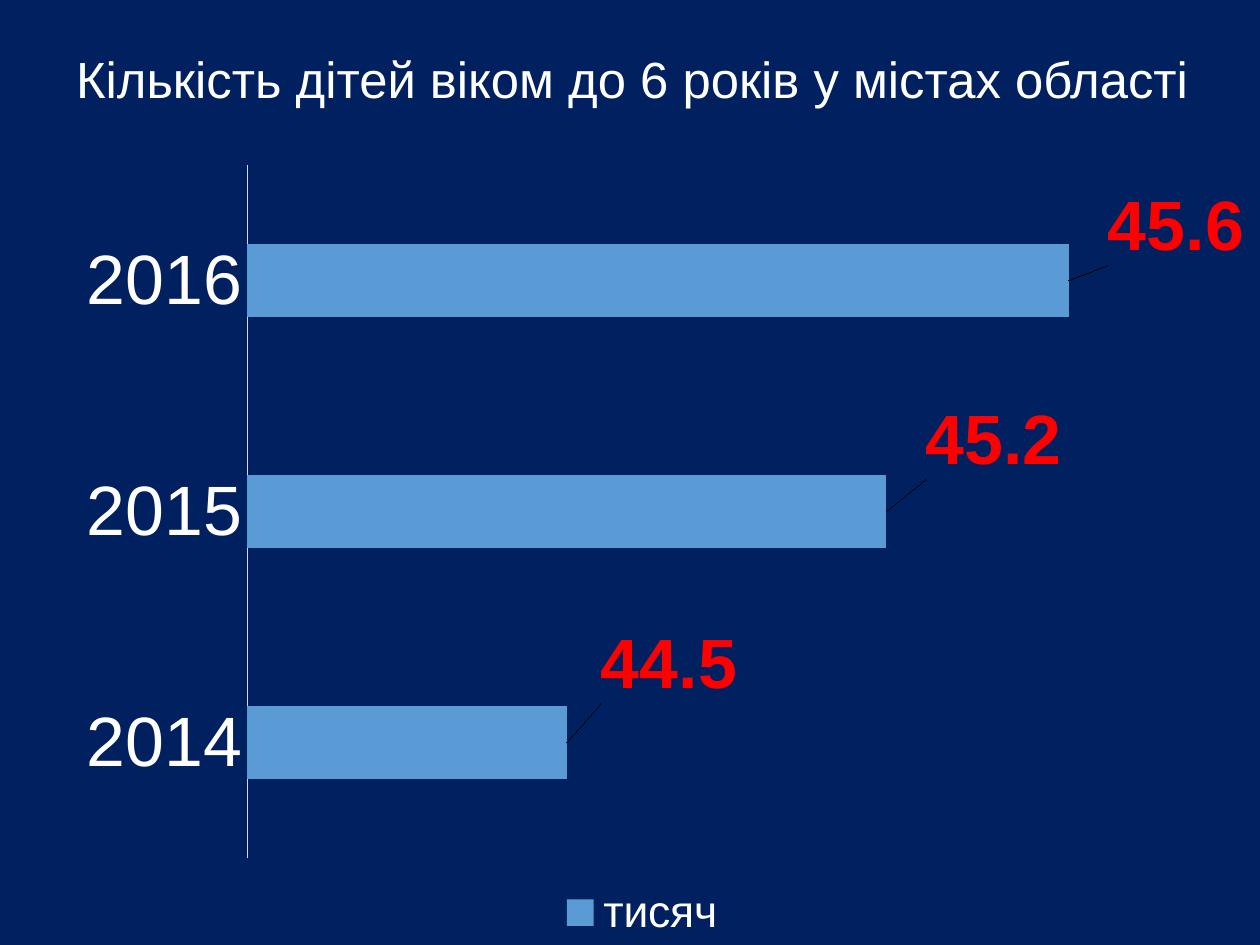
from lxml import etree
from pptx import Presentation, util as u
from pptx.chart.data import CategoryChartData
from pptx.dml.color import RGBColor
from pptx.enum import chart as charts, text
from pptx.oxml.ns import qn

TITLE = "Кількість дітей віком до 6 років у містах області"
UNIT = "тисяч"
CHILDREN = {"2014": 44.5, "2015": 45.2, "2016": 45.6}
LABEL_SHIFTS = [(30, -78), (34, -71), (34, -54)]
SLIDE = (1260, 945)
TITLE_BOX = (25, -8, 1216, 173)
CHART_BOX = (25, 149, 1234, 797)
PLOT = {"layoutTarget": "inner", "xMode": "edge", "yMode": "edge",
        "x": 0.18, "y": 0.02, "w": 0.74, "h": 0.87}
NAVY, WHITE, RED, BLUE, GREY = "002060", "FFFFFF", "FF0000", "5B9BD5", "D9D9D9"
PX = 8000


def px(*lengths):
    return [u.Emu(length * PX) for length in lengths]


def color(value):
    return RGBColor.from_string(value)


def paint(fill, value):
    fill.solid()
    fill.fore_color.rgb = color(value)


def style(font, size, value, bold=False):
    font.name, font.size, font.bold = "Arial", u.Pt(size), bold
    font.color.rgb = color(value)


def place(parent, index, settings):
    for old in parent.findall(qn("c:layout")):
        parent.remove(old)
    layout = etree.Element(qn("c:layout"))
    manual = etree.SubElement(layout, qn("c:manualLayout"))
    for name, value in settings.items():
        etree.SubElement(manual, qn("c:" + name)).set("val", str(value))
    parent.insert(index, layout)


def add_title(page):
    box = page.shapes.add_textbox(*px(*TITLE_BOX))
    frame = box.text_frame
    frame.word_wrap = True
    frame.vertical_anchor = text.MSO_ANCHOR.MIDDLE
    frame.margin_left = frame.margin_right = 0
    frame.margin_top = frame.margin_bottom = 0
    para = frame.paragraphs[0]
    para.text = TITLE
    para.alignment = text.PP_ALIGN.CENTER
    para.space_after = u.Pt(14)
    style(para.font, 32, WHITE)


def add_bars(page):
    data = CategoryChartData()
    data.categories = list(CHILDREN)
    data.add_series(UNIT, list(CHILDREN.values()))
    chart = page.shapes.add_chart(
        charts.XL_CHART_TYPE.BAR_CLUSTERED, *px(*CHART_BOX), data).chart
    chart.has_title = False
    style(chart.font, 10, WHITE)
    chart.has_legend = True
    chart.legend.position = charts.XL_LEGEND_POSITION.BOTTOM
    chart.legend.include_in_layout = False
    style(chart.legend.font, 28, WHITE)

    years = chart.category_axis
    years.major_tick_mark = years.minor_tick_mark = charts.XL_TICK_MARK.NONE
    style(years.tick_labels.font, 44, WHITE)
    years.format.line.color.rgb = color(GREY)
    years.format.line.width = u.Pt(0.75)
    values = chart.value_axis
    values.minimum_scale, values.maximum_scale = 43.8, 45.8
    values.has_major_gridlines = False
    values.visible = False

    plot = chart.plots[0]
    plot.gap_width = 219
    plot.vary_by_categories = False
    bars = plot.series[0]
    paint(bars.format.fill, BLUE)
    place(chart.element.find(".//" + qn("c:plotArea")), 0, PLOT)

    for index, (right, down) in enumerate(LABEL_SHIFTS):
        label = bars.points[index].data_label
        style(label.font, 44, RED, bold=True)
        label.position = charts.XL_LABEL_POSITION.OUTSIDE_END
    for mark, (right, down) in zip(bars.data_labels.element.findall(qn("c:dLbl")) if hasattr(bars.data_labels, "element") else
                                   chart.element.findall(".//" + qn("c:dLbl")), LABEL_SHIFTS):
        place(mark, 1, {"x": round(right / CHART_BOX[2], 3),
                        "y": round(down / CHART_BOX[3], 3)})


def main():
    deck = Presentation()
    deck.slide_width, deck.slide_height = px(*SLIDE)
    page = deck.slides.add_slide(deck.slide_layouts[6])
    paint(page.background.fill, NAVY)
    add_title(page)
    add_bars(page)
    deck.save("out.pptx")


if __name__ == "__main__":
    main()
